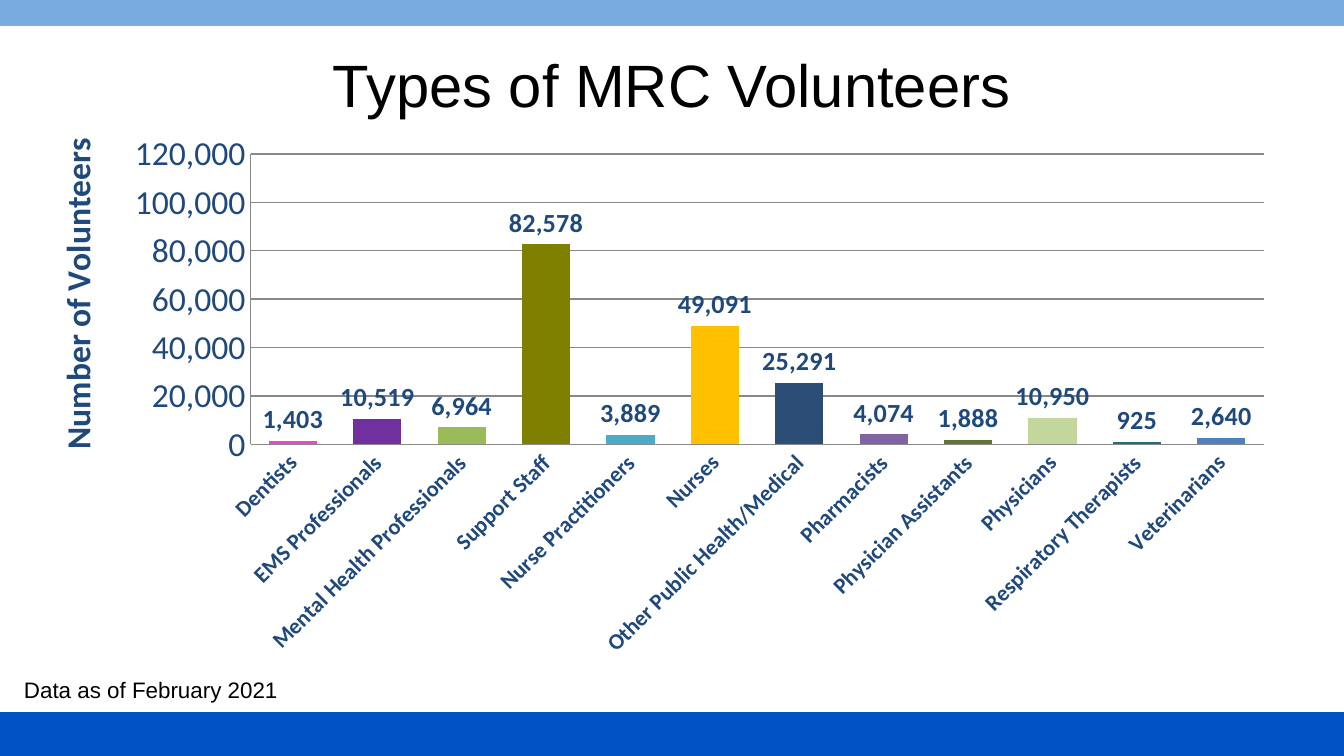
"""Build the slide on the types of MRC volunteers."""
import dataclasses
import typing

import pptx
import pptx.chart.data
import pptx.dml.color
import pptx.enum.chart
import pptx.enum.shapes
import pptx.enum.text
import pptx.oxml
import pptx.oxml.ns
import pptx.util

SCALE = 4572
HUES = {
    "sky": "7AABDE", "blue": "0051C4", "navy": "1F497D", "black": "000000",
    "grey": "888888", "pink": "F145CC", "purple": "7030A0", "green": "9BBB59",
    "olive": "808000", "aqua": "4BACC6", "gold": "FFC000", "ink": "2C4D75",
    "violet": "8064A2", "moss": "5F7530", "pale": "C3D69B", "teal": "276A7C",
    "steel": "4F81BD",
}


@dataclasses.dataclass
class Box:
    left: int
    top: int
    width: int
    height: int


@dataclasses.dataclass
class Band:
    box: Box
    hue: str


@dataclasses.dataclass
class Group:
    name: str
    count: int
    hue: str


BANDS = [
    Band(Box(0, 1062, 2000, 62), "blue"),
    Band(Box(0, -4, 2000, 40), "sky"),
]
GROUPS = [
    Group("Dentists", 1403, "pink"),
    Group("EMS Professionals", 10519, "purple"),
    Group("Mental Health Professionals", 6964, "green"),
    Group("Support Staff", 82578, "olive"),
    Group("Nurse Practitioners", 3889, "aqua"),
    Group("Nurses", 49091, "gold"),
    Group("Other Public Health/Medical", 25291, "ink"),
    Group("Pharmacists", 4074, "violet"),
    Group("Physician Assistants", 1888, "moss"),
    Group("Physicians", 10950, "pale"),
    Group("Respiratory Therapists", 925, "teal"),
    Group("Veterinarians", 2640, "steel"),
]


def rgb(hue: str) -> pptx.dml.color.RGBColor:
    return pptx.dml.color.RGBColor.from_string(HUES[hue])


def apply(item: typing.Any, **values: typing.Any) -> None:
    for key, value in values.items():
        setattr(item, key, value)


def spots(box: Box) -> list[int]:
    return [side * SCALE for side in dataclasses.astuple(box)]


def style(font: typing.Any, name: str, size: int, hue: str, bold: bool = False) -> None:
    apply(font, name=name, size=pptx.util.Pt(size), bold=bold)
    font.color.rgb = rgb(hue)


def stroke(line: typing.Any, hue: str, width: float) -> None:
    line.color.rgb = rgb(hue)
    line.width = pptx.util.Pt(width)


def draw_band(slide: typing.Any, band: Band) -> None:
    kind = pptx.enum.shapes.MSO_SHAPE.RECTANGLE
    shape = slide.shapes.add_shape(kind, *spots(band.box))
    shape.shadow.inherit = False
    shape.fill.solid()
    shape.fill.fore_color.rgb = rgb(band.hue)
    stroke(shape.line, band.hue, 2)


def draw_title(slide: typing.Any, text: str, box: Box) -> None:
    title = slide.shapes.title
    left, top, width, height = spots(box)
    apply(title, left=left, top=top, width=width, height=height)
    frame = title.text_frame
    frame.text = text
    frame.vertical_anchor = pptx.enum.text.MSO_ANCHOR.MIDDLE
    line = frame.paragraphs[0]
    line.alignment = pptx.enum.text.PP_ALIGN.CENTER
    style(line.runs[0].font, "Arial", 32, "black")


def draw_note(slide: typing.Any, text: str, box: Box) -> None:
    frame = slide.shapes.add_textbox(*spots(box)).text_frame
    frame.text = text
    apply(frame, word_wrap=False,
          auto_size=pptx.enum.text.MSO_AUTO_SIZE.SHAPE_TO_FIT_TEXT)
    style(frame.paragraphs[0].runs[0].font, "Arial", 12, "black")


def set_layout(node: typing.Any, index: int, **parts: typing.Any) -> None:
    for old in node.findall(pptx.oxml.ns.qn("c:layout")):
        node.remove(old)
    body = "".join(f'<c:{key} val="{value}"/>' for key, value in parts.items())
    space = pptx.oxml.ns.nsdecls("c")
    node.insert(index, pptx.oxml.parse_xml(
        f"<c:layout {space}><c:manualLayout>{body}</c:manualLayout></c:layout>"))


def format_axes(chart: typing.Any) -> None:
    none = pptx.enum.chart.XL_TICK_MARK.NONE
    for axis, size, bold in ((chart.category_axis, 12, True),
                             (chart.value_axis, 18, False)):
        apply(axis, major_tick_mark=none, minor_tick_mark=none)
        style(axis.tick_labels.font, "Calibri", size, "navy", bold)
        stroke(axis.format.line, "grey", 0.75)
    turn = chart.category_axis._element.find(".//" + pptx.oxml.ns.qn("a:bodyPr"))
    turn.set("rot", "-2700000")
    turn.set("vert", "horz")

    axis = chart.value_axis
    apply(axis, minimum_scale=0, maximum_scale=120000, major_unit=20000,
          has_major_gridlines=True)
    apply(axis.tick_labels, number_format="#,##0", number_format_is_linked=False)
    stroke(axis.major_gridlines.format.line, "grey", 0.75)
    frame = axis.axis_title.text_frame
    frame.text = "Number of Volunteers"
    style(frame.paragraphs[0].runs[0].font, "Calibri", 18, "navy", True)
    turn = frame._txBody.find(pptx.oxml.ns.qn("a:bodyPr"))
    turn.set("rot", "-5400000")
    turn.set("vert", "horz")
    set_layout(axis.axis_title._element, 1, xMode="edge", yMode="edge",
               x=0.02, y=0.02)


def draw_chart(slide: typing.Any, groups: list[Group], box: Box) -> None:
    data = pptx.chart.data.CategoryChartData(number_format="#,##0")
    data.categories = [group.name for group in groups]
    data.add_series("Series 1", [group.count for group in groups])
    kind = pptx.enum.chart.XL_CHART_TYPE.COLUMN_CLUSTERED
    chart = slide.shapes.add_chart(kind, *spots(box), data).chart
    apply(chart, has_legend=False, has_title=False)
    style(chart.font, "Calibri", 18, "black")
    format_axes(chart)

    plot = chart.plots[0]
    apply(plot, gap_width=75, overlap=40, vary_by_categories=False,
          has_data_labels=True)
    apply(plot.data_labels, show_value=True, number_format="#,##0",
          number_format_is_linked=False,
          position=pptx.enum.chart.XL_LABEL_POSITION.OUTSIDE_END)
    style(plot.data_labels.font, "Calibri", 14, "navy", True)
    for index, group in enumerate(groups):
        fill = plot.series[0].points[index].format.fill
        fill.solid()
        fill.fore_color.rgb = rgb(group.hue)
    area = chart._chartSpace.find(".//" + pptx.oxml.ns.qn("c:plotArea"))
    set_layout(area, 0, layoutTarget="inner", xMode="edge", yMode="edge",
               x=0.18, y=0.06, w=0.8, h=0.53)


def main() -> None:
    deck = pptx.Presentation()
    apply(deck, slide_width=2000 * SCALE, slide_height=1125 * SCALE)
    slide = deck.slides.add_slide(deck.slide_layouts[5])
    for band in BANDS:
        draw_band(slide, band)
    draw_title(slide, "Types of MRC Volunteers", Box(100, 30, 1800, 188))
    draw_note(slide, "Data as of February 2021", Box(16, 996, 422, 60))
    draw_chart(slide, GROUPS, Box(34, 180, 1884, 816))
    deck.save("out.pptx")


if __name__ == "__main__":
    main()
